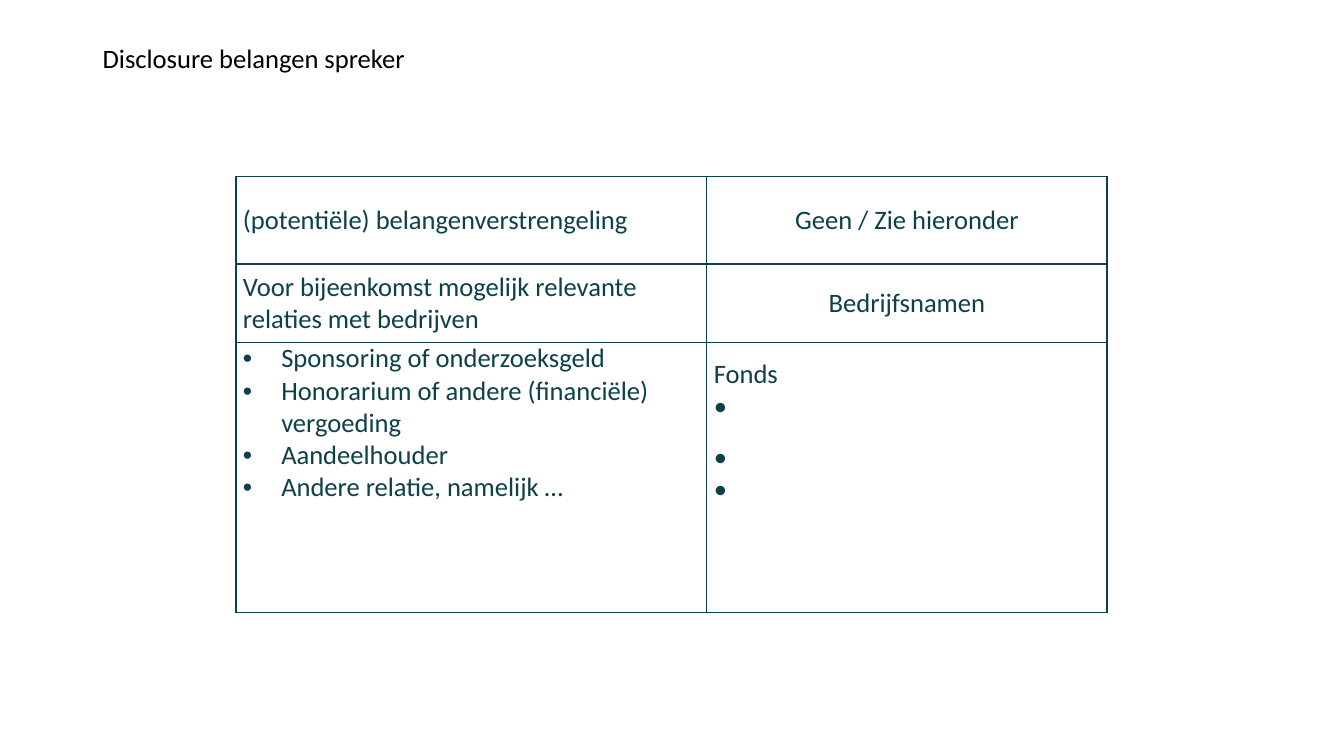
"""Build the speaker disclosure slide with its table of interests."""
from lxml.etree import SubElement
from pptx import Presentation
from pptx.dml.color import RGBColor
from pptx.enum.text import MSO_ANCHOR as Anchor, PP_ALIGN as Align
from pptx.oxml import parse_xml
from pptx.oxml.ns import nsdecls, qn
from pptx.util import Inches, Pt

TEAL = "0D4049"


def add_text(paragraph, text, color):
    run = paragraph.add_run()
    run.text = text
    run.font.name = "Calibri"
    run.font.size = Pt(19)
    run.font.color.rgb = RGBColor.from_string(color)


prs = Presentation()
prs.slide_width, prs.slide_height = Inches(13.33), Inches(7.5)
slide = prs.slides.add_slide(prs.slide_layouts[6])

title = slide.shapes.add_textbox(Inches(0.92), Inches(0.4), Inches(11.5), Inches(1.45)).text_frame
title.word_wrap = True
title.paragraphs[0].line_spacing = 0.9
add_text(title.paragraphs[0], "Disclosure belangen spreker", "000000")

widths = [4.67, 3.97]
heights = [0.87, 0.78, 2.68]
interests = slide.shapes.add_table(
    3, 2, Inches(2.34), Inches(1.75), Inches(sum(widths)), Inches(sum(heights))
).table
interests.first_row = interests.horz_banding = False
for column, width in zip(interests.columns, widths):
    column.width = Inches(width)
for row, height in zip(interests.rows, heights):
    row.height = Inches(height)

contents = [
    [["(potentiële) belangenverstrengeling"], ["Geen / Zie hieronder"]],
    [["Voor bijeenkomst mogelijk relevante relaties met bedrijven"], ["Bedrijfsnamen"]],
    [
        [
            "Sponsoring of onderzoeksgeld",
            "Honorarium of andere (financiële) vergoeding",
            "Aandeelhouder",
            "Andere relatie, namelijk …",
        ],
        ["Fonds", "•", "•", "•"],
    ],
]
for r, row_contents in enumerate(contents):
    for c, lines in enumerate(row_contents):
        cell = interests.cell(r, c)
        cell.margin_left = cell.margin_right = Inches(0.07)
        cell.margin_top = cell.margin_bottom = 0
        cell.vertical_anchor = Anchor.TOP if r == 2 else Anchor.MIDDLE
        cell.fill.background()
        for position, side in enumerate(["lnL", "lnR", "lnT", "lnB"]):
            border = parse_xml(
                f'<a:{side} {nsdecls("a")} w="{Pt(1)}"><a:solidFill>'
                f'<a:srgbClr val="{TEAL}"/></a:solidFill></a:{side}>'
            )
            cell._tc.get_or_add_tcPr().insert(position, border)
        for n, line in enumerate(lines):
            frame = cell.text_frame
            paragraph = frame.add_paragraph() if n else frame.paragraphs[0]
            if r < 2 and c == 1:
                paragraph.alignment = Align.CENTER
            if r == 2 and c == 0:
                properties = paragraph._p.get_or_add_pPr()
                properties.set("marL", str(Inches(0.38)))
                properties.set("indent", str(Inches(-0.38)))
                SubElement(properties, qn("a:buFont"), typeface="Arial")
                SubElement(properties, qn("a:buChar"), char="•")
            add_text(paragraph, line, TEAL)

companies = interests.cell(2, 1)
companies.margin_top = Inches(0.15)
companies.text_frame.paragraphs[2].space_before = Pt(13.4)

prs.save("out.pptx")
